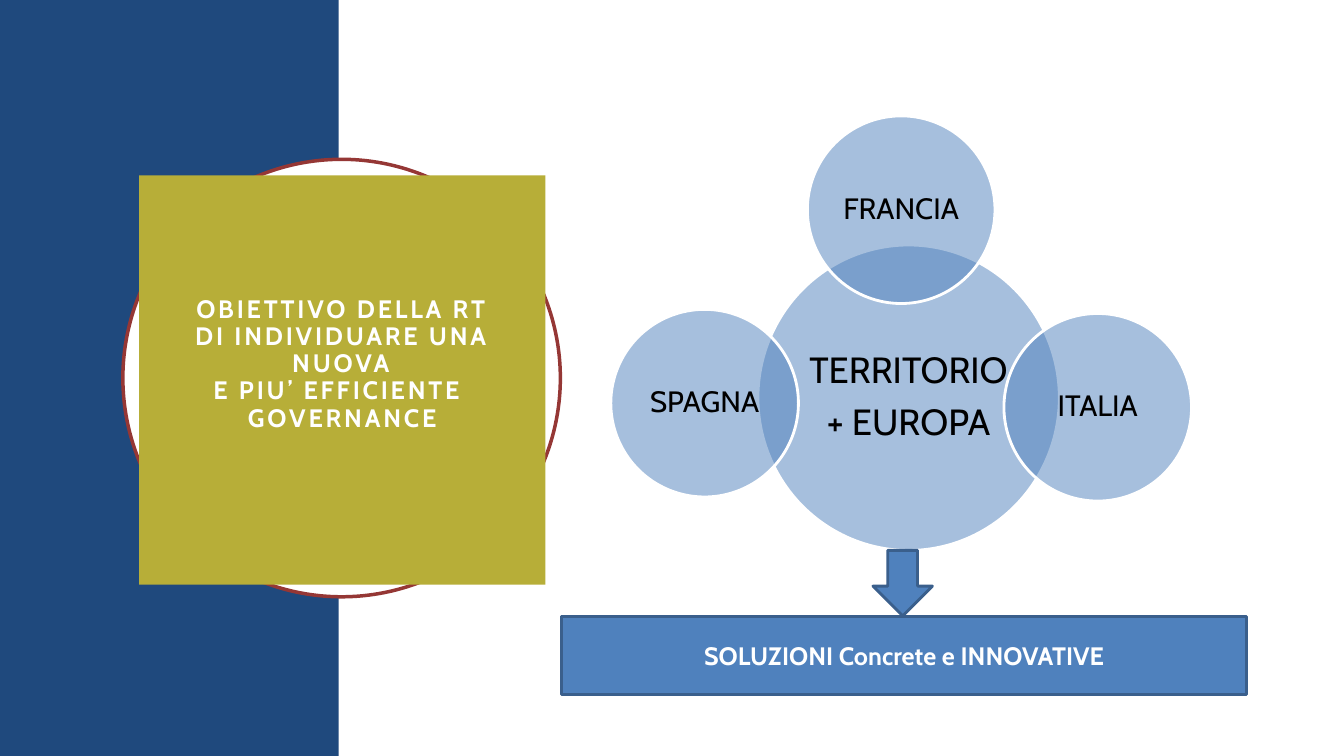
import dataclasses

import pptx
import pptx.dml.color
import pptx.enum.shapes
import pptx.enum.text
import pptx.oxml
import pptx.oxml.ns
import pptx.util

Pt = pptx.util.Pt
SHAPE = pptx.enum.shapes.MSO_SHAPE


@dataclasses.dataclass(frozen=True)
class Theme:
    font: str = "Cabin"
    navy: str = "1F497D"
    olive: str = "B7AE38"
    red: str = "953735"
    blue: str = "4F81BD"
    edge: str = "3A5F8C"
    white: str = "FFFFFF"
    black: str = "000000"
    body: float = 18
    country: float = 21
    hub: float = 26
    line: float = 2
    ring_line: float = 2.5


THEME = Theme()


def rgb(value):
    return pptx.dml.color.RGBColor.from_string(value)


def add_shape(slide, kind, box, fill, line=None, width=THEME.line, alpha=None):
    sp = slide.shapes.add_shape(kind, *(Pt(v) for v in box))
    sp.shadow.inherit = False
    sp.fill.solid()
    sp.fill.fore_color.rgb = rgb(fill)
    if alpha is not None:
        clr = sp.fill._xPr.find(".//" + pptx.oxml.ns.qn("a:srgbClr"))
        child = pptx.oxml.parse_xml(
            "<a:alpha %s val='%d'/>" % (pptx.oxml.ns.nsdecls("a"), alpha * 1000))
        clr.append(child)
    if line:
        sp.line.color.rgb = rgb(line)
        sp.line.width = Pt(width)
    else:
        sp.line.fill.background()
    return sp


def set_text(sp, text, size, color, insets, bold=False, line_spacing=None,
             space_after=0, tracking=None):
    tf = sp.text_frame
    tf.word_wrap = True
    tf.vertical_anchor = pptx.enum.text.MSO_ANCHOR.MIDDLE
    tf.margin_left, tf.margin_top, tf.margin_right, tf.margin_bottom = (
        Pt(v) for v in insets)
    tf.text = text
    for p in tf.paragraphs:
        p.alignment = pptx.enum.text.PP_ALIGN.CENTER
        p.space_after = Pt(space_after)
        if line_spacing:
            p.line_spacing = line_spacing
        for r in p.runs:
            r.font.name = THEME.font
            r.font.size = Pt(size)
            r.font.bold = bold
            r.font.color.rgb = rgb(color)
            if tracking:
                r.font._element.set("spc", str(tracking * 100))


def add_title(slide, x, y, w, h):
    # Ring behind the title square
    add_shape(slide, SHAPE.OVAL, (x, y, w, h), THEME.white, THEME.red,
              THEME.ring_line)
    # Title square
    sp = add_shape(slide, SHAPE.RECTANGLE,
                   (x + 11.6, y + 11.5, w - 22.3, h - 20.2), THEME.olive)
    set_text(sp, "OBIETTIVO DELLA RT\vDI INDIVIDUARE UNA NUOVA\v"
                 "E PIU’ EFFICIENTE \vGOVERNANCE",
             THEME.body, THEME.white, (14.4, 14.4, 14.4, 36.4), bold=True,
             line_spacing=0.9, tracking=2)


def add_territory(slide, x, y, w, h):
    d = 134
    hub_w, hub_h = 215.3, 218.2
    # Hub first, so the countries overlap it: text, box, size, space, inset
    circles = [
        ("TERRITORIO\n+ EUROPA", (x + 105.1, y + h - hub_h, hub_w, hub_h),
         THEME.hub, 9.1, 2.9),
    ]
    countries = [("FRANCIA", (w - d) / 2, 0), ("ITALIA", w - d, 141.1),
                 ("SPAGNA", 0, 138.2)]
    circles += [(name, (x + dx, y + dy, d, d), THEME.country, 7.3, 2.2)
                for name, dx, dy in countries]
    for text, box, size, space, inset in circles:
        sp = add_shape(slide, SHAPE.OVAL, box, THEME.blue, THEME.white, alpha=50)
        set_text(sp, text, size, THEME.black, [inset] * 4,
                 line_spacing=0.9, space_after=space)


def add_outcome(slide, x, y, w, h):
    arrow_w, arrow_h, bar_h = 42.5, 46.8, 55.4
    # Arrow from the hub to the outcome bar
    add_shape(slide, SHAPE.DOWN_ARROW,
              (x + (w - arrow_w) / 2 - 1, y, arrow_w, arrow_h),
              THEME.blue, THEME.edge)
    # Outcome bar
    sp = add_shape(slide, SHAPE.RECTANGLE, (x, y + h - bar_h, w, bar_h),
                   THEME.blue, THEME.edge)
    set_text(sp, "SOLUZIONI Concrete e INNOVATIVE", THEME.body, THEME.white,
             (7.2, 3.6, 7.2, 3.6), bold=True)


def main():
    prs = pptx.Presentation()
    prs.slide_width, prs.slide_height = Pt(960), Pt(540)
    slide = prs.slides.add_slide(prs.slide_layouts[6])
    # Side panel
    add_shape(slide, SHAPE.RECTANGLE, (0, 0, 242, 540), THEME.navy)
    add_title(slide, 87.8, 113.8, 312.5, 312.5)
    add_territory(slide, 436.3, 82.8, 414.8, 310.4)
    add_outcome(slide, 401, 393.1, 489.6, 102.9)
    prs.save("out.pptx")


if __name__ == "__main__":
    main()
